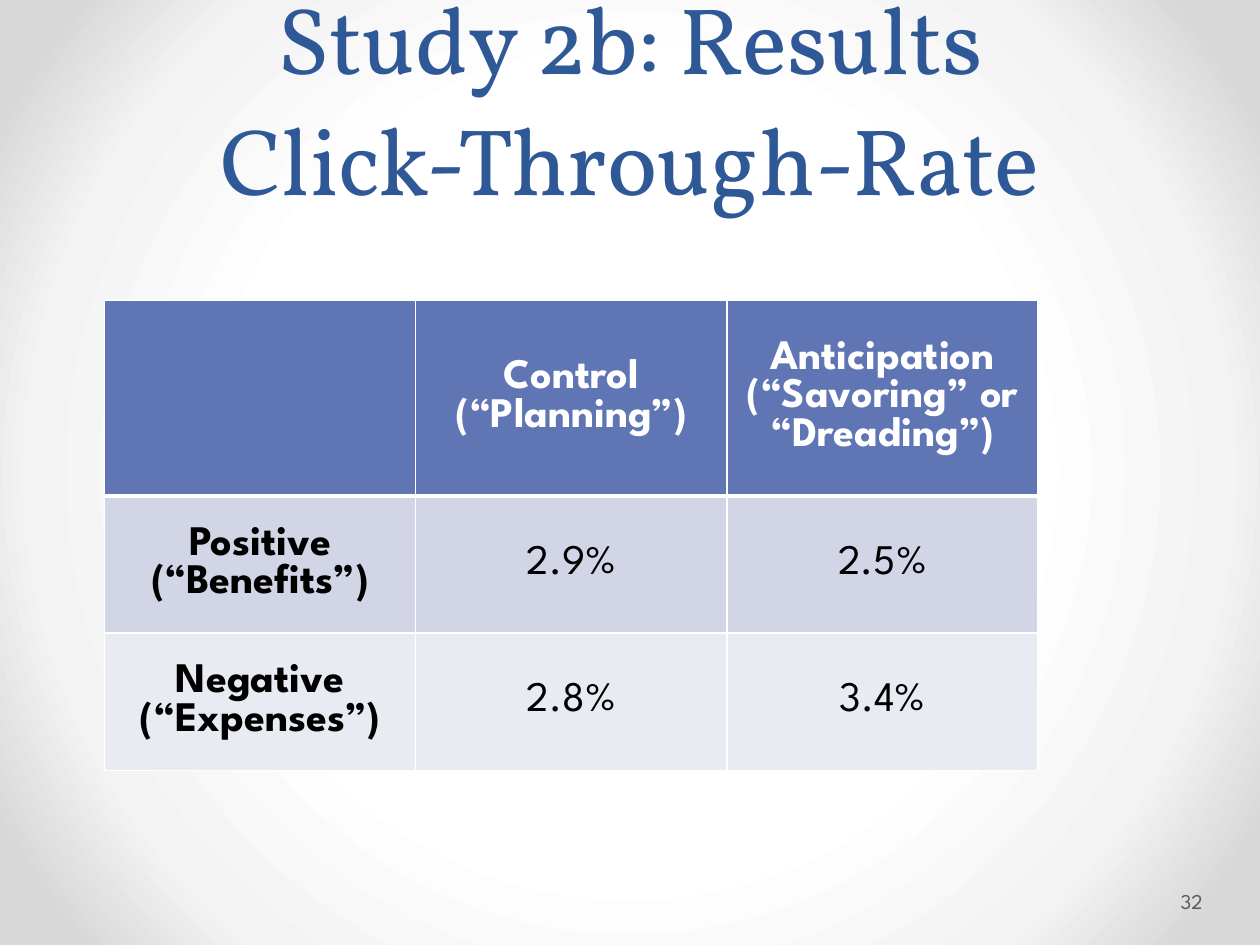
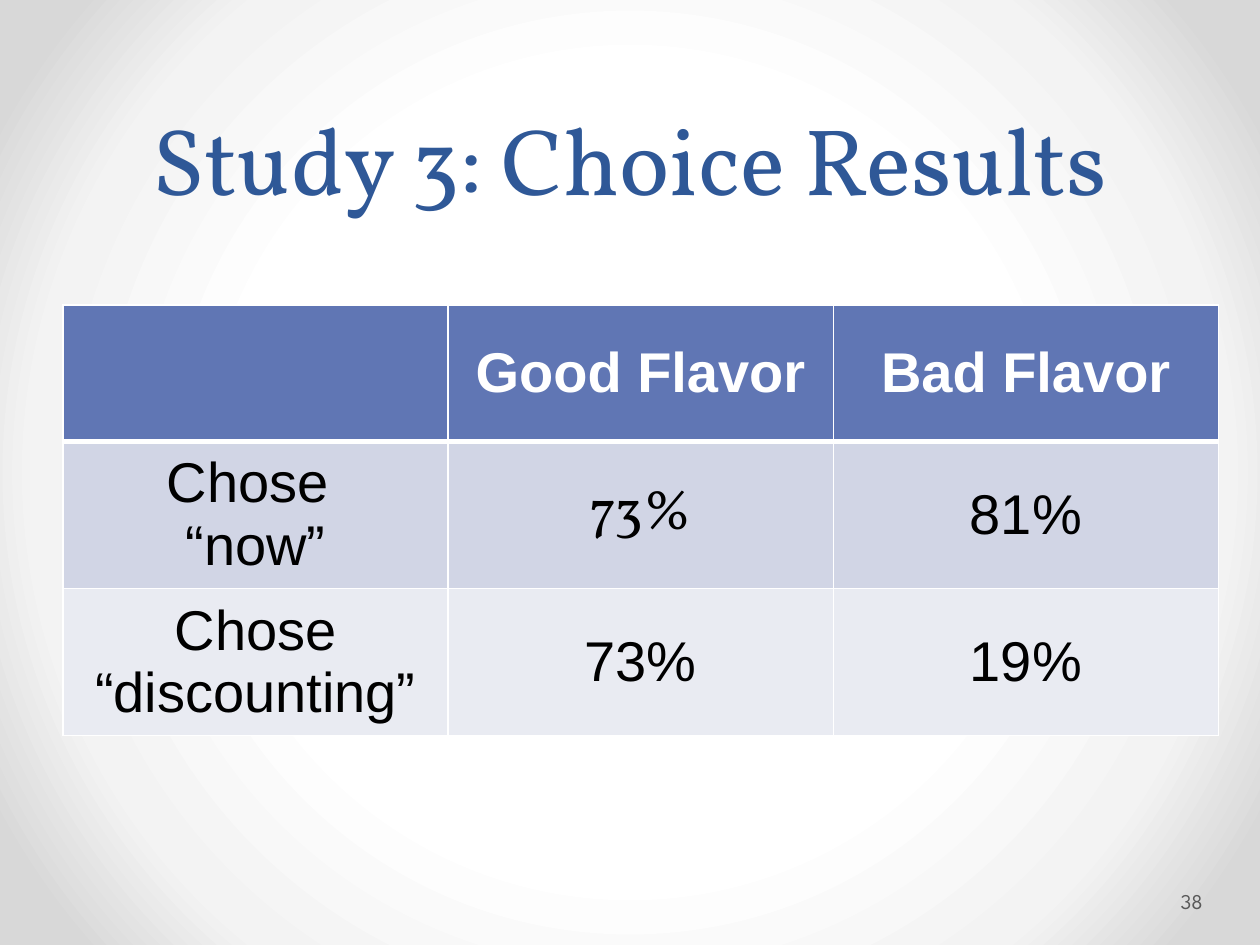
from pptx import Presentation
from pptx.dml.color import RGBColor
from pptx.enum.text import MSO_ANCHOR as Anchor, PP_ALIGN as Align
from pptx.oxml import parse_xml
from pptx.oxml.ns import nsdecls, qn
from pptx.util import Pt


def color(value):
    return RGBColor.from_string(value)


def write(frame, text, look, align, spacing=None):
    frame.text = text
    for paragraph in frame.paragraphs:
        paragraph.alignment = align
        paragraph.line_spacing = spacing
        for run in paragraph.runs:
            for key, value in look.items():
                if key == "color":
                    run.font.color.rgb = color(value)
                else:
                    setattr(run.font, key, value)


TITLE = {"name": "Vollkorn", "size": Pt(54), "color": "2F5897", "bold": False}
NUMBER = {"name": "League Spartan", "size": Pt(12), "color": "595959"}
ROW_FILLS = ["6076B4", "D1D5E5", "E9EBF2"]
ROW_INKS = ["FFFFFF", "000000", "000000"]
BACKDROP = [(0, "FFFFFF"), (50, "FFFFFF"), (76, "F3F3F3"), (92, "D8D8D8"), (100, "D8D8D8")]

results = [
    {
        "title": "Study 2b: Results\vClick-Through-Rate",
        "number": "32",
        "corner": (59.76, 171.36),
        "column": 177.84,
        "heights": [112, 78.5, 78.5],
        "look": {"name": "League Spartan", "size": Pt(24)},
        "bold_labels": True,
        "special_fonts": {},
        "rows": [
            ["", "Control (“Planning”)", "Anticipation\n(“Savoring” or “Dreading”)"],
            ["Positive (“Benefits”)", "2.9%", "2.5%"],
            ["Negative\v(“Expenses”)", "2.8%", "3.4%"],
        ],
    },
    {
        "title": "Study 3: Choice Results",
        "number": "38",
        "corner": (36, 174.24),
        "column": 220.1,
        "heights": [78, 78, 78],
        "look": {"name": "Arial", "size": Pt(32)},
        "bold_labels": False,
        "special_fonts": {(1, 1): "Vollkorn"},
        "rows": [
            ["", "Good Flavor", "Bad Flavor"],
            ["Chose \v“now”", "73%", "81%"],
            ["Chose “discounting”", "73%", "19%"],
        ],
    },
]

prs = Presentation()
prs.slide_width, prs.slide_height = Pt(720), Pt(540)

master = prs.slide_master
master.background.fill.gradient()
gradient = master.element.find(".//" + qn("a:gradFill"))
stops = "".join(
    f'<a:gs pos="{place * 1000}"><a:srgbClr val="{tone}"/></a:gs>' for place, tone in BACKDROP
)
gradient.getparent().replace(gradient, parse_xml(
    f'<a:gradFill {nsdecls("a")} rotWithShape="1"><a:gsLst>{stops}</a:gsLst>'
    '<a:path path="circle"><a:fillToRect l="50000" t="50000" r="50000" b="50000"/></a:path>'
    '</a:gradFill>'
))

for study in results:
    slide = prs.slides.add_slide(prs.slide_layouts[6])

    title = slide.shapes.add_textbox(Pt(36), Pt(0), Pt(648), Pt(126)).text_frame
    title.word_wrap = True
    title.vertical_anchor = Anchor.BOTTOM
    write(title, study["title"], TITLE, Align.CENTER, 1.07)

    left, top = study["corner"]
    rows, heights = study["rows"], study["heights"]
    table = slide.shapes.add_table(
        3, 3, Pt(left), Pt(top), Pt(3 * study["column"]), Pt(sum(heights))
    ).table
    for column in table.columns:
        column.width = Pt(study["column"])
    for r, row in enumerate(rows):
        table.rows[r].height = Pt(heights[r])
        for c, text in enumerate(row):
            cell = table.cell(r, c)
            cell.vertical_anchor = Anchor.MIDDLE
            properties = cell._tc.get_or_add_tcPr()
            widths = {"L": 1, "R": 1, "T": 3 if r == 1 else 1, "B": 3 if r == 0 else 1}
            for side, width in widths.items():
                properties.append(parse_xml(
                    f'<a:ln{side} {nsdecls("a")} w="{Pt(width)}">'
                    f'<a:solidFill><a:srgbClr val="FFFFFF"/></a:solidFill></a:ln{side}>'
                ))
            cell.fill.solid()
            cell.fill.fore_color.rgb = color(ROW_FILLS[r])
            look = study["look"] | {
                "color": ROW_INKS[r],
                "bold": r == 0 or (c == 0 and study["bold_labels"]),
            }
            look["name"] = study["special_fonts"].get((r, c), look["name"])
            write(cell.text_frame, text, look, Align.CENTER)

    number = slide.shapes.add_textbox(Pt(672.5), Pt(500.4), Pt(44), Pt(28.8)).text_frame
    number.word_wrap = True
    number.vertical_anchor = Anchor.MIDDLE
    number.margin_left, number.margin_right = Pt(2.16), Pt(3.6)
    write(number, study["number"], NUMBER, Align.LEFT)

prs.save("out.pptx")
